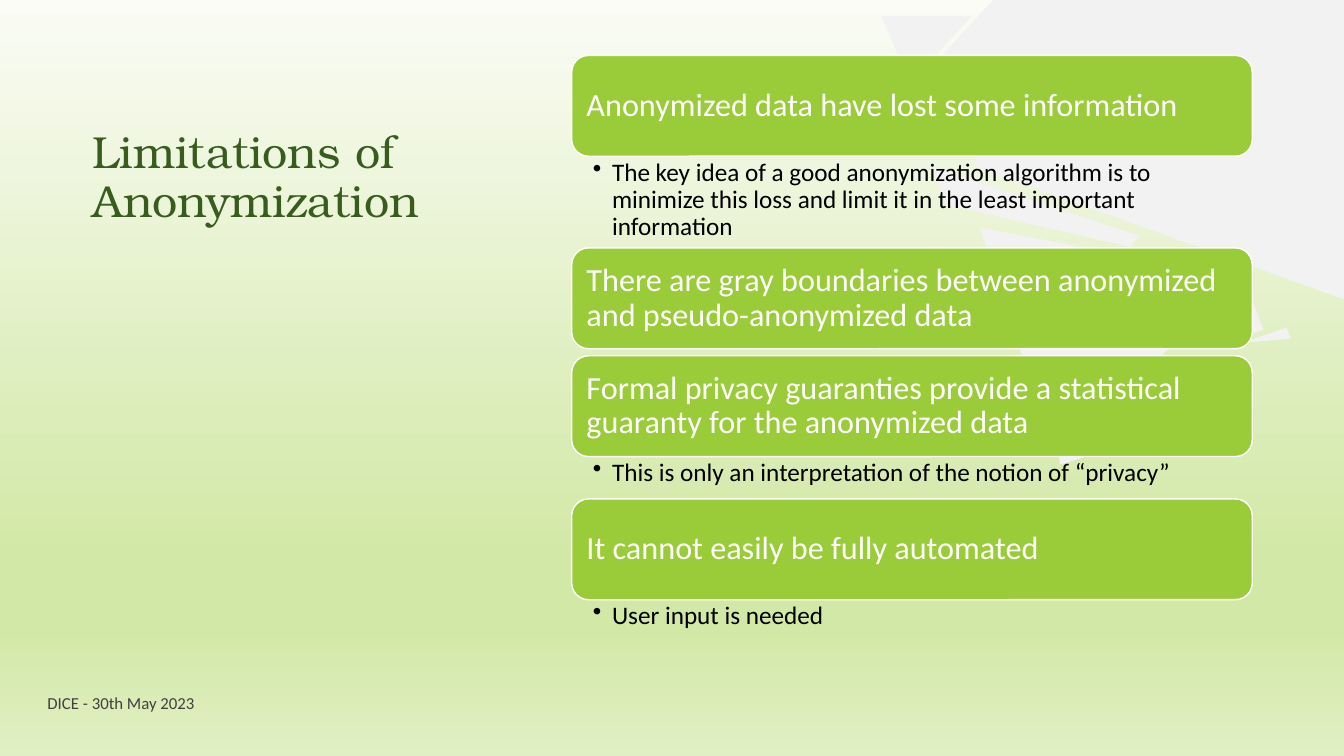
from copy import deepcopy
from dataclasses import dataclass

from lxml import etree
from pptx import Presentation
from pptx.dml.color import RGBColor
from pptx.enum.shapes import MSO_SHAPE
from pptx.enum.text import MSO_ANCHOR, MSO_AUTO_SIZE, PP_ALIGN
from pptx.oxml.ns import qn
from pptx.util import Inches, Pt

ROUNDED = MSO_SHAPE.ROUNDED_RECTANGLE
TOP, MIDDLE, BOTTOM = MSO_ANCHOR.TOP, MSO_ANCHOR.MIDDLE, MSO_ANCHOR.BOTTOM
LEFT = PP_ALIGN.LEFT
NO_AUTOFIT = MSO_AUTO_SIZE.NONE
TITLE_ONLY = 5


@dataclass(frozen=True)
class Theme:
    heading_font: str = "TeX Gyre Bonum"
    body_font: str = "Calibri"
    title_size: int = 32
    card_size: int = 23
    note_size: int = 18
    footer_size: int = 12
    title: str = "375C1E"
    card: str = "9ACB39"
    white: str = "FFFFFF"
    note: str = "000000"
    footer: str = "404040"
    shard: str = "F2F2F2"
    backdrop: tuple = ((0, "FAFCF5"), (0.74, "D2E8A6"),
                       (0.83, "D2E8A6"), (1, "E1EFC4"))


THEME = Theme()
SLIDE_W, SLIDE_H = 13.33, 7.5

# Boxes in inches: left, top, width, height
TITLE_BOX = (0.92, 0.5, 4.3, 1.75)
CARDS_BOX = (5.67, 0.55, 6.75, 5.82)
FOOTER_BOX = (0.47, 6.77, 9.61, 0.4)

CARD_H, CARD_GAP = 1, 0.07
NOTE_LINE, NOTE_PAD = 0.245, 0.175
NOTE_INDENT = 0.19

# Each limitation: statement, note below it, lines the note takes
LIMITATIONS = [
    ("Anonymized data have lost some information",
     "The key idea of a good anonymization algorithm is to minimize this loss "
     "and limit it in the least important information", 3),
    ("There are gray boundaries between anonymized and pseudo-anonymized data",
     None, 0),
    ("Formal privacy guaranties provide a statistical guaranty for the "
     "anonymized data",
     "This is only an interpretation of the notion of “privacy”", 1),
    ("It cannot easily be fully automated", "User input is needed", 1),
]

# Outlines of the pale shards, in inches on the slide
SHARDS = [
    [(8.74, 0.16), (9.64, 0.16), (9.03, 0.82)],
    [(9.85, 0), (13.33, 0), (13.33, 2.97), (9.69, 1.66), (9.25, 0.65)],
    [(9.72, 2.26), (12.26, 2.74), (10.96, 4.13), (10.22, 3.78)],
    [(10.5, 4.25), (10.74, 4.54), (10.51, 4.61)],
    [(10.47, 4.06), (11.24, 4.26), (10.93, 4.52), (10.6, 4.34)],
    [(9.26, 1.66), (11.3, 2.34), (11.21, 2.45), (9.38, 2.03)],
    [(12.76, 3.25), (12.8, 3.36), (12.32, 3.4)],
    [(12.35, 2.78), (12.53, 3.27), (12.1, 3.42), (11.9, 3.44)],
]


def rgb(value):
    return RGBColor.from_string(value)


def inches(values):
    return [Inches(value) for value in values]


def write(frame, text, font, size, color, anchor, insets=(0, 0, 0, 0),
          spacing=0.9):
    """Put one left-aligned run in a text frame and return its paragraph."""
    frame.word_wrap = True
    frame.auto_size = NO_AUTOFIT
    frame.vertical_anchor = anchor
    (frame.margin_left, frame.margin_top,
     frame.margin_right, frame.margin_bottom) = inches(insets)
    paragraph = frame.paragraphs[0]
    paragraph.alignment = LEFT
    paragraph.line_spacing = spacing
    run = paragraph.add_run()
    run.text = text
    run.font.name = font
    run.font.size = Pt(size)
    run.font.color.rgb = rgb(color)
    return paragraph


def add_bullet(paragraph, indent):
    properties = paragraph._p.get_or_add_pPr()
    properties.set("marL", str(Inches(indent)))
    properties.set("indent", str(-Inches(indent)))
    etree.SubElement(properties, qn("a:buChar")).set("char", "•")


def paint_backdrop(slide):
    fill = slide.background.fill
    fill.gradient()
    fill.gradient_angle = 270
    # The preset gradient has two stops; add the missing ones
    stop_list = next(slide.element.iter(qn("a:gsLst")))
    while len(stop_list) < len(THEME.backdrop):
        stop_list.append(deepcopy(stop_list[0]))
    for stop, (position, color) in zip(fill.gradient_stops, THEME.backdrop):
        stop.position = position
        stop.color.rgb = rgb(color)


def add_shards(slide):
    for outline in SHARDS:
        start, *corners = [inches(point) for point in outline]
        builder = slide.shapes.build_freeform(*start)
        builder.add_line_segments(corners, close=True)
        shard = builder.convert_to_shape()
        shard.shadow.inherit = False
        shard.fill.solid()
        shard.fill.fore_color.rgb = rgb(THEME.shard)
        shard.line.fill.background()


def add_title(slide, box):
    title = slide.shapes.title
    title.left, title.top, title.width, title.height = inches(box)
    write(title.text_frame, "Limitations of Anonymization",
          THEME.heading_font, THEME.title_size, THEME.title, BOTTOM)


def add_card(slide, box, statement):
    card = slide.shapes.add_shape(ROUNDED, *inches(box))
    card.shadow.inherit = False
    card.fill.solid()
    card.fill.fore_color.rgb = rgb(THEME.card)
    card.line.color.rgb = rgb(THEME.white)
    card.line.width = Pt(1)
    write(card.text_frame, statement, THEME.body_font, THEME.card_size,
          THEME.white, MIDDLE, (0.1, 0.1, 0.1, 0.1))


def add_note(slide, box, text):
    note = slide.shapes.add_textbox(*inches(box))
    paragraph = write(note.text_frame, text, THEME.body_font, THEME.note_size,
                      THEME.note, TOP, (0.21, 0.03, 0.18, 0.03))
    add_bullet(paragraph, NOTE_INDENT)


def add_limitations(slide, box):
    """Stack the cards downwards, each followed by its note or by a gap."""
    left, top, width, _ = box
    for statement, note, lines in LIMITATIONS:
        add_card(slide, (left, top, width, CARD_H), statement)
        top += CARD_H
        if note:
            note_height = NOTE_PAD + lines * NOTE_LINE
            add_note(slide, (left, top, width, note_height), note)
            top += note_height
        else:
            top += CARD_GAP


def add_footer(slide, box):
    footer = slide.shapes.add_textbox(*inches(box))
    write(footer.text_frame, "DICE - 30th May 2023", THEME.body_font,
          THEME.footer_size, THEME.footer, MIDDLE, spacing=1.0)
    footer.text_frame.paragraphs[0].space_after = Pt(6)


def main():
    deck = Presentation()
    deck.slide_width, deck.slide_height = inches((SLIDE_W, SLIDE_H))
    slide = deck.slides.add_slide(deck.slide_layouts[TITLE_ONLY])
    paint_backdrop(slide)
    add_shards(slide)
    add_title(slide, TITLE_BOX)
    add_limitations(slide, CARDS_BOX)
    add_footer(slide, FOOTER_BOX)
    deck.save("out.pptx")


if __name__ == "__main__":
    main()
